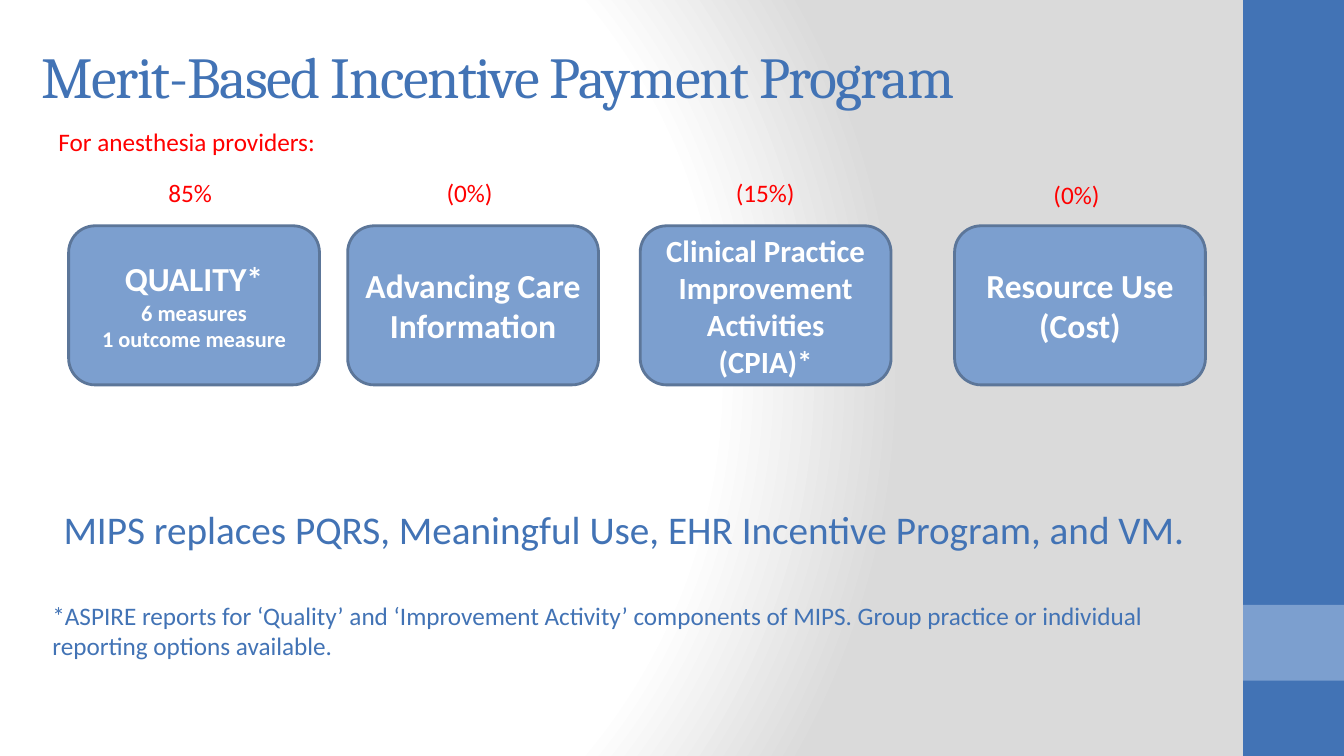
from dataclasses import dataclass

from pptx import Presentation
from pptx.dml.color import RGBColor
from pptx.enum.shapes import MSO_SHAPE
from pptx.enum.text import MSO_ANCHOR, MSO_AUTO_SIZE, PP_ALIGN
from pptx.oxml import parse_xml
from pptx.oxml.ns import nsdecls
from pptx.shapes.autoshape import Shape
from pptx.slide import Slide
from pptx.text.text import TextFrame
from pptx.util import Cm, Pt

BLUE = RGBColor(0x42, 0x73, 0xB5)
LIGHT_BLUE = RGBColor(0x7C, 0x9F, 0xCF)
OUTLINE = RGBColor(0x5C, 0x76, 0x99)
RED = RGBColor(0xFF, 0x00, 0x00)
WHITE = RGBColor(0xFF, 0xFF, 0xFF)

SLIDE_WIDTH, SLIDE_HEIGHT = 33.86, 19.05
SIDEBAR_WIDTH = 2.54
CARD_TOP, CARD_WIDTH, CARD_HEIGHT = 5.69, 6.32, 4.01
LABEL_HEIGHT = 1.02

BACKGROUND = f"""<p:bg {nsdecls('p', 'a')}><p:bgPr>
<a:gradFill rotWithShape="1"><a:gsLst>
<a:gs pos="0"><a:srgbClr val="FFFFFF"/></a:gs>
<a:gs pos="75000"><a:srgbClr val="FFFFFF"/></a:gs>
<a:gs pos="100000"><a:srgbClr val="DADADA"/></a:gs>
</a:gsLst><a:path path="circle">
<a:fillToRect l="20000" t="50000" r="100000" b="50000"/>
</a:path></a:gradFill><a:effectLst/></p:bgPr></p:bg>"""


@dataclass(frozen=True)
class Line:
    text: str
    size: float
    align: PP_ALIGN = PP_ALIGN.LEFT
    space_before: float = 0


@dataclass(frozen=True)
class Box:
    left: float
    top: float
    width: float
    height: float


@dataclass(frozen=True)
class Category:
    left: float
    lines: tuple[Line, ...]
    weight: str
    weight_box: Box


def centred(text: str, size: float) -> Line:
    return Line(text, size, PP_ALIGN.CENTER)


CATEGORIES = (
    Category(1.73, (centred("QUALITY*", 24), centred("6 measures", 16),
                    centred("1 outcome measure", 16)),
             "85%", Box(3.99, 4.34, 1.8, LABEL_HEIGHT)),
    Category(8.76, (centred("Advancing Care Information", 24),),
             "(0%)", Box(11, 4.34, 1.88, LABEL_HEIGHT)),
    Category(16.13, (centred("Clinical Practice Improvement Activities (CPIA)*", 22),),
             "(15%)", Box(18.29, 4.34, 2.03, LABEL_HEIGHT)),
    Category(24.05, (centred("Resource Use", 24), centred("(Cost)", 24)),
             "(0%)", Box(26.29, 4.39, 1.83, LABEL_HEIGHT)),
)

SUMMARY = (
    centred("MIPS replaces PQRS, Meaningful Use, EHR Incentive Program, and VM.", 28),
    Line("*ASPIRE reports for ‘Quality’ and ‘Improvement Activity’ components of MIPS. "
         "Group practice or individual reporting options available.", 18, space_before=34),
)


def write_lines(frame: TextFrame, lines: tuple[Line, ...], color: RGBColor,
                bold: bool = False, font: str = "Calibri") -> None:
    frame.word_wrap = True
    frame.text = "\n".join(line.text for line in lines)
    for paragraph, line in zip(frame.paragraphs, lines):
        paragraph.alignment = line.align
        if line.space_before:
            paragraph.space_before = Pt(line.space_before)
        for run in paragraph.runs:
            run.font.name = font
            run.font.size = Pt(line.size)
            run.font.bold = bold
            run.font.color.rgb = color


def add_text(slide: Slide, box: Box, lines: tuple[Line, ...], color: RGBColor) -> None:
    frame = slide.shapes.add_textbox(
        Cm(box.left), Cm(box.top), Cm(box.width), Cm(box.height)).text_frame
    write_lines(frame, lines, color)
    frame.auto_size = MSO_AUTO_SIZE.SHAPE_TO_FIT_TEXT


def add_block(slide: Slide, preset: MSO_SHAPE, box: Box, fill: RGBColor) -> Shape:
    block = slide.shapes.add_shape(
        preset, Cm(box.left), Cm(box.top), Cm(box.width), Cm(box.height))
    block.shadow.inherit = False
    block.fill.solid()
    block.fill.fore_color.rgb = fill
    block.line.fill.background()
    return block


def add_category(slide: Slide, category: Category) -> None:
    card = add_block(slide, MSO_SHAPE.ROUNDED_RECTANGLE,
                     Box(category.left, CARD_TOP, CARD_WIDTH, CARD_HEIGHT), LIGHT_BLUE)
    card.line.color.rgb = OUTLINE
    card.line.width = Pt(2)
    card.text_frame.vertical_anchor = MSO_ANCHOR.MIDDLE
    write_lines(card.text_frame, category.lines, WHITE, bold=True)
    add_text(slide, category.weight_box, (Line(category.weight, 18),), RED)


def format_title(slide: Slide) -> None:
    title = slide.shapes.title
    title.left, title.top = Cm(0.79), Cm(0.84)
    title.width, title.height = Cm(29.21), Cm(2.13)
    frame = title.text_frame
    write_lines(frame, (Line("Merit-Based Incentive Payment Program", 41.4),),
                BLUE, font="Cambria")
    frame.auto_size = MSO_AUTO_SIZE.NONE
    frame.vertical_anchor = MSO_ANCHOR.MIDDLE
    frame.paragraphs[0].runs[0].font._element.set("spc", "-100")


def main() -> None:
    deck = Presentation()
    deck.slide_width, deck.slide_height = Cm(SLIDE_WIDTH), Cm(SLIDE_HEIGHT)
    slide = deck.slides.add_slide(deck.slide_layouts[5])
    slide.element.cSld.insert(0, parse_xml(BACKGROUND))

    sidebar_left = SLIDE_WIDTH - SIDEBAR_WIDTH
    add_block(slide, MSO_SHAPE.RECTANGLE,
              Box(sidebar_left, 0, SIDEBAR_WIDTH, SLIDE_HEIGHT), BLUE)
    add_block(slide, MSO_SHAPE.RECTANGLE,
              Box(sidebar_left, 15.24, SIDEBAR_WIDTH, 1.91), LIGHT_BLUE)
    format_title(slide)
    add_text(slide, Box(1.07, 12.61, 29.29, 4.94), SUMMARY, BLUE)
    add_text(slide, Box(1.22, 3.07, 17.48, LABEL_HEIGHT),
             (Line("For anesthesia providers:", 18),), RED)
    for category in CATEGORIES:
        add_category(slide, category)

    deck.save("out.pptx")


if __name__ == "__main__":
    main()
